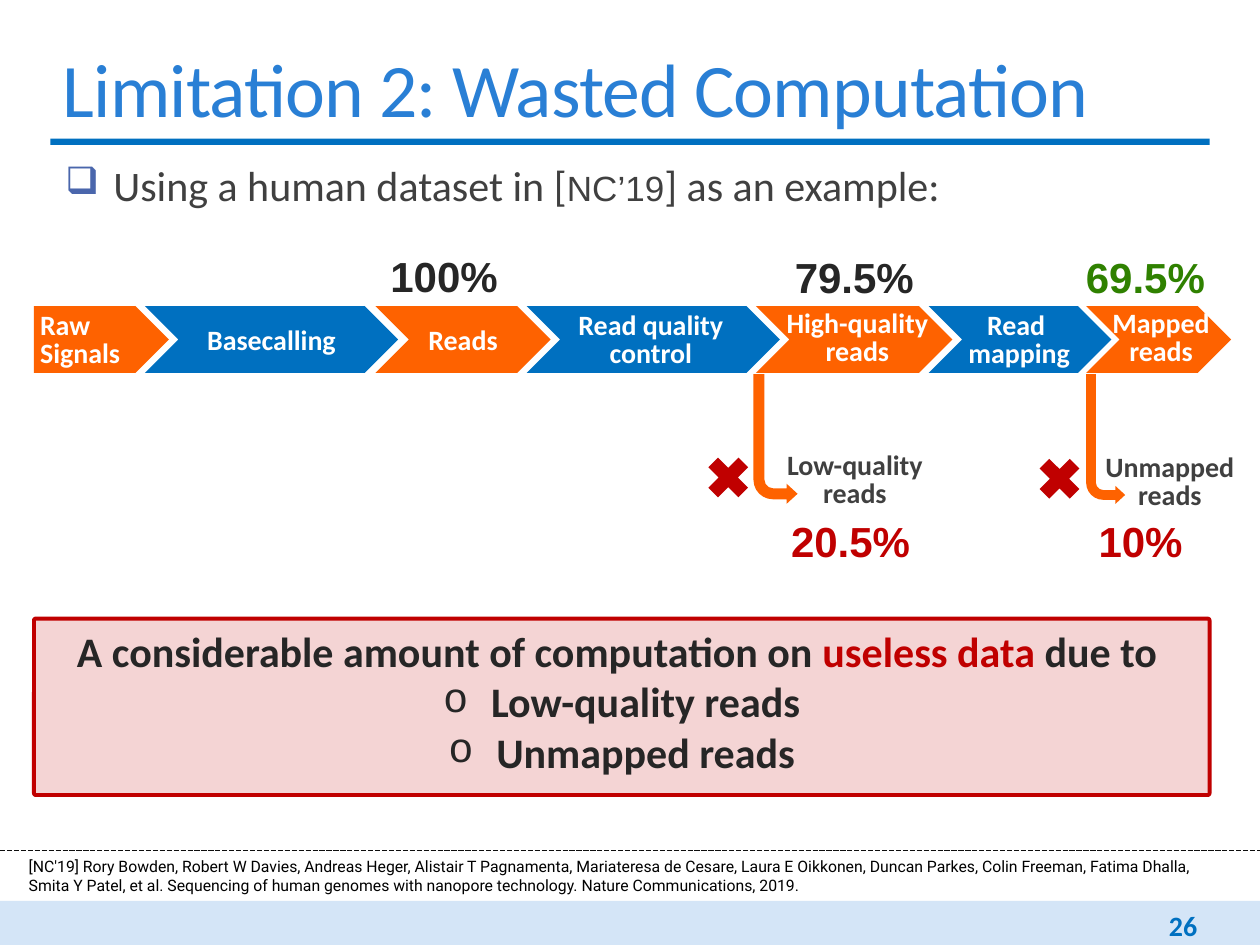
from lxml import etree
from pptx import Presentation
from pptx.dml.color import RGBColor
from pptx.enum.dml import MSO_LINE
from pptx.enum.shapes import MSO_CONNECTOR, MSO_SHAPE
from pptx.enum.text import MSO_ANCHOR, PP_ALIGN
from pptx.oxml.ns import qn
from pptx.util import Inches, Pt

RECT, ROUND = MSO_SHAPE.RECTANGLE, MSO_SHAPE.ROUNDED_RECTANGLE
PENTAGON, CHEVRON = MSO_SHAPE.PENTAGON, MSO_SHAPE.CHEVRON
CROSS, BENT = MSO_SHAPE.MATH_MULTIPLY, MSO_SHAPE.BENT_ARROW
STRAIGHT, DASH = MSO_CONNECTOR.STRAIGHT, MSO_LINE.SQUARE_DOT
TOP, MIDDLE = MSO_ANCHOR.TOP, MSO_ANCHOR.MIDDLE
LEFT, CENTER, RIGHT = PP_ALIGN.LEFT, PP_ALIGN.CENTER, PP_ALIGN.RIGHT

BLUE = RGBColor(0x00, 0x70, 0xC0)
SKY = RGBColor(0x29, 0x7F, 0xD5)
PALE = RGBColor(0xD4, 0xE5, 0xF7)
INDIGO = RGBColor(0x4A, 0x66, 0xAC)
ORANGE = RGBColor(0xFE, 0x62, 0x00)
RED = RGBColor(0xC0, 0x00, 0x00)
GREEN = RGBColor(0x2F, 0x81, 0x00)
GRAY = RGBColor(0x40, 0x40, 0x40)
DARK = RGBColor(0x26, 0x26, 0x26)
INK = RGBColor(0x0D, 0x0D, 0x0D)
BLACK = RGBColor(0x00, 0x00, 0x00)
WHITE = RGBColor(0xFF, 0xFF, 0xFF)

deck = Presentation()
deck.slide_width, deck.slide_height = Inches(10), Inches(7.5)
COL, ROW = deck.slide_width / 100, deck.slide_height / 75
slide = deck.slides.add_slide(deck.slide_layouts[6])


def draw(kind, x, y, w, h, fill=None):
    area = [int(x * COL), int(y * ROW), int(w * COL), int(h * ROW)]
    if kind is None:
        return slide.shapes.add_textbox(*area)
    shape = slide.shapes.add_shape(kind, *area)
    shape.shadow.inherit = False
    shape.fill.solid()
    shape.fill.fore_color.rgb = fill
    shape.line.fill.background()
    return shape


def write(shape, lines, size, color, face="Calibri", bold=True,
          align=CENTER, lead=None, anchor=TOP, wrap=True):
    frame = shape.text_frame
    frame.word_wrap, frame.vertical_anchor = wrap, anchor
    frame.text = "\n".join(lines)
    for para in frame.paragraphs:
        para.alignment, para.line_spacing = align, lead
        font = para.font
        font.name, font.size, font.bold = face, Pt(size), bold
        font.color.rgb = color


draw(RECT, 0, 71.5, 100, 3.5, PALE)
draw(RECT, 4, 11, 92, 0.5, BLUE)

title = draw(None, 4, 2.8, 92, 8.2)
write(title, ["Limitation 2: Wasted Computation"], 43.2, SKY, bold=False,
      align=LEFT, anchor=MIDDLE)
title.text_frame.paragraphs[0].runs[0]._r.get_or_add_rPr().set("spc", "-50")

body = draw(None, 4, 12.6, 92, 4.4).text_frame
body.word_wrap = True
body.margin_left = body.margin_right = 0
intro = body.paragraphs[0]
intro.line_spacing, intro.space_after = 0.9, Pt(2)
props = intro._p.get_or_add_pPr()
props.set("marL", str(int(5 * COL)))
props.set("indent", str(int(-3.8 * COL)))
tint = etree.SubElement(props, qn("a:buClr"))
etree.SubElement(tint, qn("a:srgbClr"), val=str(INDIGO))
etree.SubElement(props, qn("a:buSzPct"), val="90000")
etree.SubElement(props, qn("a:buChar"), char="❑")
for text, face, size in [("Using a human dataset in [", "Calibri", 24),
                         ("NC’19", "Arial", 20),
                         ("] as an example:", "Calibri", 24)]:
    run = intro.add_run()
    run.text = text
    run.font.name, run.font.size = face, Pt(size)
    run.font.color.rgb = GRAY

page = draw(None, 82.2, 71.9, 13.8, 3)
write(page, ["26"], 16, BLUE, align=RIGHT, anchor=MIDDLE)

steps = [
    (2.7, 10.7, ["Raw Signals"], (2.2, 24.4, 11.7)),
    (11.5, 20.1, ["Basecalling"], None),
    (29.8, 13.9, ["Reads"], None),
    (41.8, 20.1, ["Read quality", "control"], (43.7, 24.4, 15.9)),
    (60, 15.6, ["High-quality", "reads"], (59.4, 24.2, 17.3)),
    (73.7, 14.5, ["Read ", "mapping"], (75.6, 24.4, 10.6)),
    (86.2, 11.5, ["Mapped", "reads"], (85.6, 24.2, 13.1)),
]
for i, (x, w, lines, spot) in enumerate(steps):
    step = draw(CHEVRON if i else PENTAGON, x, 24.3, w, 5.3,
                BLUE if i % 2 else ORANGE)
    if spot:
        left, top, wide = spot
        write(draw(None, left, top, wide, 5.6), lines, 16, WHITE,
              align=CENTER if i else LEFT, lead=Pt(16))
    else:
        write(step, lines, 16, WHITE, anchor=MIDDLE)

drops = [("Low-quality", 59.2, 35.5, 55.5, 59.8, 3.5),
         ("Unmapped", 84.2, 35.6, 81.8, 86.2, 3.1)]
for word, x, y, mark, bend, w in drops:
    write(draw(None, x, y, 17.3, 5.6), [word, "reads"], 16, GRAY, lead=Pt(16))
    draw(CROSS, mark, y + 0.1, 4.6, 4.6, RED)
    arrow = draw(BENT, bend, 29.7, w, 10.3, ORANGE)
    for i, share in enumerate([0.25, 0.23, 0.25, 0.44]):
        arrow.adjustments[i] = share
    arrow._element.spPr.find(qn("a:xfrm")).set("flipV", "1")

panel = draw(ROUND, 2.7, 49.1, 93.3, 14, RED)
panel.adjustments[0] = 0.01
panel.line.color.rgb, panel.line.width = RED, Pt(2.25)
shade = panel._element.spPr.find(qn("a:solidFill"))[0]
etree.SubElement(shade, qn("a:alpha"), val="17000")
frame = panel.text_frame
frame.word_wrap, frame.vertical_anchor = True, TOP
claim = frame.paragraphs[0]
claim.alignment = CENTER
for text, color in [("A considerable amount of computation on ", DARK),
                    ("useless data ", RED), ("due to ", DARK)]:
    run = claim.add_run()
    run.text = text
    run.font.name, run.font.size, run.font.bold = "Calibri", Pt(24), True
    run.font.color.rgb = color
for text in ["Low-quality reads", "Unmapped reads"]:
    item = frame.add_paragraph()
    item.text, item.alignment = text, CENTER
    props = item._p.get_or_add_pPr()
    props.set("marL", str(int(3.8 * COL)))
    props.set("indent", str(int(-3.8 * COL)))
    etree.SubElement(props, qn("a:buFont"), typeface="Courier New")
    etree.SubElement(props, qn("a:buChar"), char="o")
    item.font.name, item.font.size, item.font.bold = "Calibri", Pt(24), True
    item.font.color.rgb = DARK

for text, x, y, w, color in [("100%", 30, 19.4, 10.6, DARK),
                             ("79.5%", 62.1, 19.5, 11.6, DARK),
                             ("69.5%", 85.2, 19.5, 11.6, GREEN),
                             ("20.5%", 61.8, 40.4, 11.6, RED),
                             ("10%", 86.2, 40.4, 8.8, RED)]:
    write(draw(None, x, y, w, 5), [text], 24, color, "Arial",
          align=LEFT, wrap=False)

cite = (
    "[NC'19] Rory Bowden, Robert W Davies, Andreas Heger, "
    "Alistair T Pagnamenta, Mariateresa de Cesare, Laura E Oikkonen, "
    "Duncan Parkes, Colin Freeman, Fatima Dhalla, Smita Y Patel, et al. "
    "Sequencing of human genomes with nanopore technology. "
    "Nature Communications, 2019."
)
write(draw(None, 1.3, 67.5, 94.7, 4), [cite], 9, BLACK, "Roboto",
      bold=False, align=LEFT)

level = int(67.5 * ROW)
rule = slide.shapes.add_connector(STRAIGHT, 0, level, deck.slide_width, level)
rule.line.color.rgb, rule.line.width = INK, Pt(1)
rule.line.dash_style = DASH
etree.SubElement(rule._element.spPr, qn("a:effectLst"))

deck.save("out.pptx")
